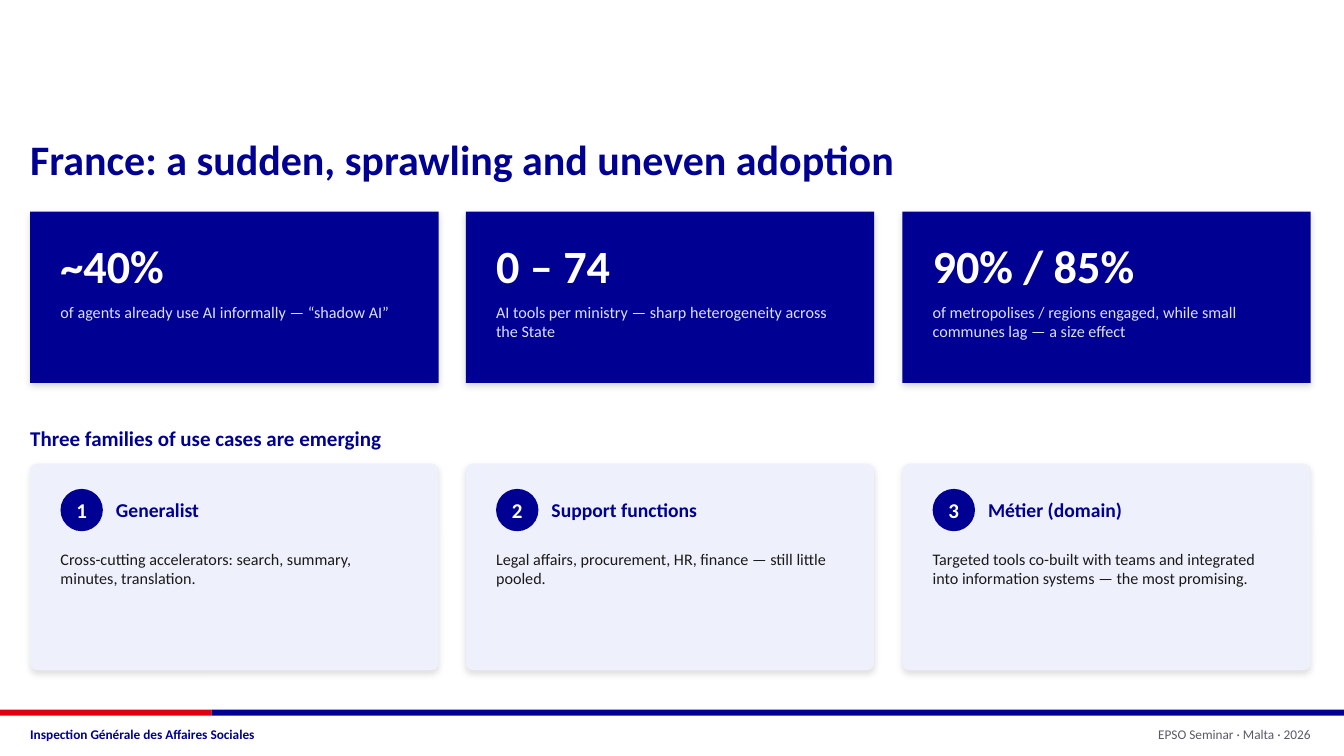
from lxml.etree import SubElement
from pptx import Presentation
from pptx.dml.color import RGBColor
from pptx.enum.shapes import MSO_SHAPE as Shape
from pptx.enum.text import MSO_ANCHOR as Anchor, PP_ALIGN as Align
from pptx.oxml.ns import qn
from pptx.util import Pt

# Content
TITLE = "France: a sudden, sprawling and uneven adoption"
FIGURES = [
    ("~40%", "of agents already use AI informally — “shadow AI”"),
    ("0 – 74", "AI tools per ministry — sharp heterogeneity across the State"),
    ("90% / 85%", "of metropolises / regions engaged, while small communes lag — a size effect"),
]
FAMILIES_HEADING = "Three families of use cases are emerging"
FAMILIES = [
    ("Generalist", "Cross-cutting accelerators: search, summary, minutes, translation."),
    ("Support functions", "Legal affairs, procurement, HR, finance — still little pooled."),
    ("Métier (domain)", "Targeted tools co-built with teams and integrated "
                        "into information systems — the most promising."),
]
FOOTER_LEFT = "Inspection Générale des Affaires Sociales"
FOOTER_RIGHT = "EPSO Seminar · Malta · 2026"

# Style
FONT = "Calibri"
NAVY, RED, WHITE = "000092", "E1000F", "FFFFFF"
PALE, LAVENDER, INK, GREY = "EEF0FB", "DDE0FA", "1A1A1A", "5A5A66"

# Layout in px, 100 to the inch
PX = 9144
WIDTH, HEIGHT = 1333, 750
MARGIN, RIGHT, PAD = 30, 1300, 30
CARD_WIDTH = 405
INNER_WIDTH = CARD_WIDTH - 2 * PAD
GAP_STEP = (RIGHT - MARGIN - CARD_WIDTH) / 2
FIGURE_TOP, FIGURE_HEIGHT = 210, 170
FAMILY_TOP, FAMILY_HEIGHT = 460, 205
BADGE, BADGE_GAP = 42, 13
RULE_TOP, RULE_HEIGHT, RED_WIDTH = 704, 6, 210

presentation = Presentation()
presentation.slide_width, presentation.slide_height = WIDTH * PX, HEIGHT * PX
slide = presentation.slides.add_slide(presentation.slide_layouts[6])


def color(value):
    return RGBColor.from_string(value)


def emu(*lengths):
    return [length * PX for length in lengths]


def add_block(kind, left, top, width, height, fill):
    shape = slide.shapes.add_shape(kind, *emu(left, top, width, height))
    shape.shadow.inherit = False
    shape.fill.solid()
    shape.fill.fore_color.rgb = color(fill)
    shape.line.fill.background()
    return shape


def add_shadow(shape, opacity):
    effects = shape.element.spPr.find(qn("a:effectLst"))
    shadow = SubElement(effects, qn("a:outerShdw"), blurRad=str(Pt(5)),
                        dist=str(Pt(2)), dir="5400000", algn="ctr", rotWithShape="0")
    black = SubElement(shadow, qn("a:srgbClr"), val="000000")
    SubElement(black, qn("a:alpha"), val=str(opacity * 1000))


def write(shape, text, size, ink, bold=False, align=Align.LEFT, anchor=Anchor.MIDDLE):
    frame = shape.text_frame
    frame.word_wrap = True
    frame.vertical_anchor = anchor
    frame.margin_left = frame.margin_top = frame.margin_right = frame.margin_bottom = 0
    paragraph = frame.paragraphs[0]
    paragraph.alignment = align
    run = paragraph.add_run()
    run.text = text
    run.font.name, run.font.size, run.font.bold = FONT, Pt(size), bold
    run.font.color.rgb = color(ink)


def add_text(left, top, width, height, *content, **style):
    box = slide.shapes.add_textbox(*emu(left, top, width, height))
    write(box, *content, **style)


def card_left(index):
    return int(MARGIN + index * GAP_STEP)


# Footer
add_block(Shape.RECTANGLE, 0, RULE_TOP, RED_WIDTH, RULE_HEIGHT, RED)
add_block(Shape.RECTANGLE, RED_WIDTH, RULE_TOP, WIDTH - RED_WIDTH, RULE_HEIGHT, NAVY)
add_text(MARGIN, 713, 800, 30, FOOTER_LEFT, 9.5, NAVY, bold=True)
add_text(RIGHT - 450, 713, 450, 30, FOOTER_RIGHT, 9.5, GREY, align=Align.RIGHT)

# Title
add_text(MARGIN, 115, 1260, 85, TITLE, 30, NAVY, bold=True)

# Key figures
for index, (figure, caption) in enumerate(FIGURES):
    left = card_left(index)
    card = add_block(Shape.RECTANGLE, left, FIGURE_TOP, CARD_WIDTH, FIGURE_HEIGHT, NAVY)
    add_shadow(card, 16)
    add_text(left + PAD, FIGURE_TOP + 18, INNER_WIDTH, 70, figure, 33, WHITE, bold=True)
    add_text(left + PAD, FIGURE_TOP + 90, INNER_WIDTH, 70, caption, 11.5, LAVENDER,
             anchor=Anchor.TOP)

# Families of use cases
add_text(MARGIN, 415, 1200, 40, FAMILIES_HEADING, 15, NAVY, bold=True)
for index, (name, description) in enumerate(FAMILIES):
    left = card_left(index)
    card = add_block(Shape.ROUNDED_RECTANGLE, left, FAMILY_TOP, CARD_WIDTH, FAMILY_HEIGHT, PALE)
    card.adjustments[0] = 0.034
    add_shadow(card, 12)
    badge_top = FAMILY_TOP + 25
    badge = add_block(Shape.OVAL, left + PAD, badge_top, BADGE, BADGE, NAVY)
    write(badge, str(index + 1), 15, WHITE, bold=True, align=Align.CENTER)
    add_text(left + PAD + BADGE + BADGE_GAP, badge_top, 300, BADGE, name, 14, NAVY, bold=True)
    add_text(left + PAD, FAMILY_TOP + 85, INNER_WIDTH, 105, description, 11.5, INK,
             anchor=Anchor.TOP)

presentation.save("out.pptx")
